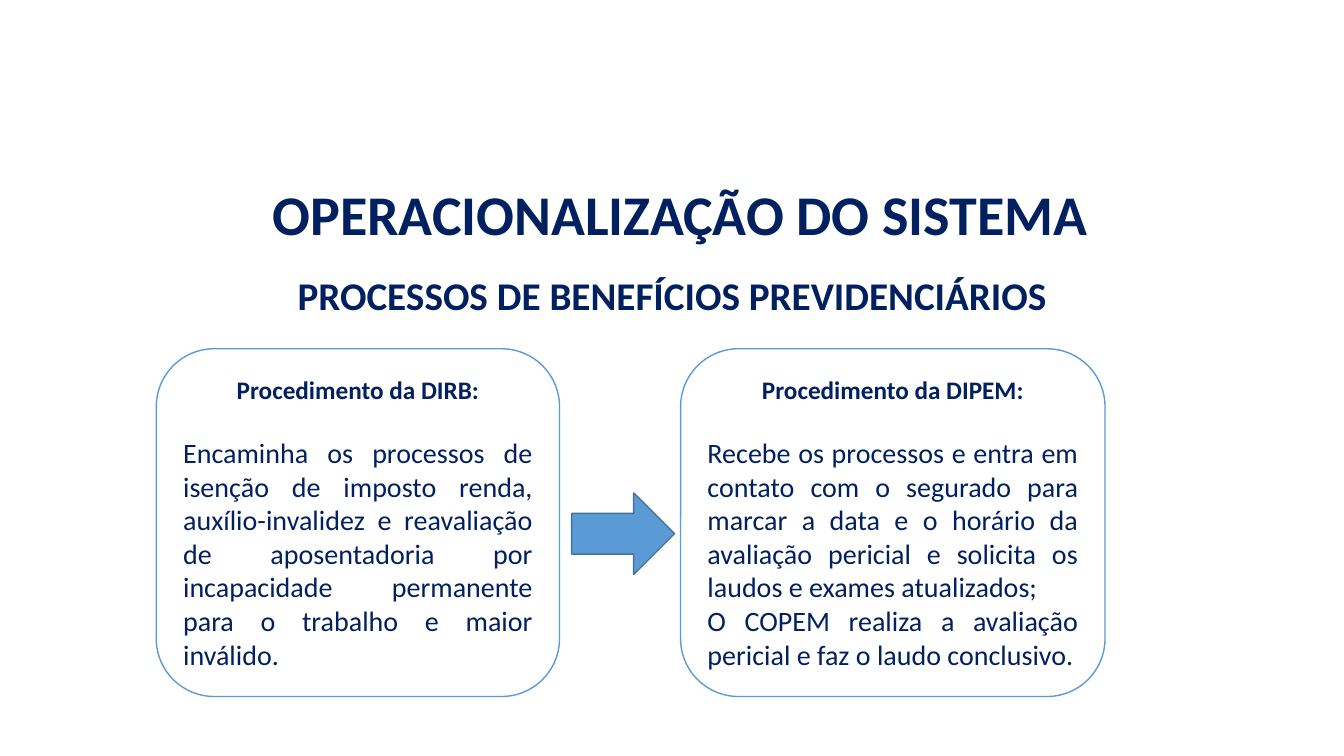
"""Build the slide on how social security benefit cases are processed."""
from dataclasses import dataclass

from pptx import Presentation
from pptx.dml.color import RGBColor
from pptx.enum import shapes, text
from pptx.util import Inches, Pt

NAVY, BLUE, DARK_BLUE, WHITE = "002060", "5B9BD5", "43739E", "FFFFFF"
FONT = "Calibri"
CARD_TOP, CARD_HEIGHT = 3.46, 3.45


@dataclass(frozen=True)
class Heading:
    wording: str
    left: float
    top: float
    width: float
    height: float
    size: int
    anchor: text.MSO_ANCHOR


@dataclass(frozen=True)
class Card:
    title: str
    steps: tuple[str, ...]
    left: float
    width: float


HEADINGS = (
    Heading("OPERACIONALIZAÇÃO DO SISTEMA", 1.08, 1.62, 11.33, 1.08, 40, text.MSO_ANCHOR.MIDDLE),
    Heading("PROCESSOS DE BENEFÍCIOS PREVIDENCIÁRIOS", 1, 2.7, 11.33, 0.6, 28, text.MSO_ANCHOR.TOP),
)
CARDS = (
    Card(
        "Procedimento da DIRB:",
        ("Encaminha os processos de isenção de imposto renda, auxílio-invalidez e "
         "reavaliação de aposentadoria por incapacidade permanente para o trabalho "
         "e maior inválido.",),
        1.55, 4,
    ),
    Card(
        "Procedimento da DIPEM:",
        ("Recebe os processos e entra em contato com o segurado para marcar a data e o "
         "horário da avaliação pericial e solicita os laudos e exames atualizados;",
         "O COPEM realiza a avaliação pericial e faz o laudo conclusivo."),
        6.75, 4.21,
    ),
)


def color(value: str) -> RGBColor:
    return RGBColor.from_string(value)


def write(paragraph, wording: str, size: int, bold: bool, alignment: text.PP_ALIGN) -> None:
    paragraph.text = wording
    paragraph.alignment = alignment
    paragraph.font.name = FONT
    paragraph.font.size = Pt(size)
    paragraph.font.bold = bold
    paragraph.font.color.rgb = color(NAVY)


def add_heading(slide, heading: Heading) -> None:
    box = slide.shapes.add_textbox(
        Inches(heading.left), Inches(heading.top), Inches(heading.width), Inches(heading.height))
    frame = box.text_frame
    frame.word_wrap = True
    frame.vertical_anchor = heading.anchor
    paragraph = frame.paragraphs[0]
    write(paragraph, heading.wording, heading.size, True, text.PP_ALIGN.CENTER)
    paragraph.line_spacing = 0.9


def add_box(slide, kind: shapes.MSO_SHAPE, left: float, top: float, width: float,
            height: float, fill: str, line: str):
    shape = slide.shapes.add_shape(kind, Inches(left), Inches(top), Inches(width), Inches(height))
    shape.shadow.inherit = False
    shape.fill.solid()
    shape.fill.fore_color.rgb = color(fill)
    shape.line.color.rgb = color(line)
    shape.line.width = Pt(1)
    return shape


def add_card(slide, card: Card) -> None:
    shape = add_box(slide, shapes.MSO_SHAPE.ROUNDED_RECTANGLE, card.left, CARD_TOP,
                    card.width, CARD_HEIGHT, WHITE, BLUE)
    frame = shape.text_frame
    frame.word_wrap = True
    frame.vertical_anchor = text.MSO_ANCHOR.MIDDLE
    title = frame.paragraphs[0]
    write(title, card.title, 18, True, text.PP_ALIGN.CENTER)
    title.space_after = Pt(22)
    for step in card.steps:
        write(frame.add_paragraph(), step, 20, False, text.PP_ALIGN.JUSTIFY)


def main() -> None:
    presentation = Presentation()
    presentation.slide_width = Inches(13.33)
    presentation.slide_height = Inches(7.5)
    slide = presentation.slides.add_slide(presentation.slide_layouts[6])
    for heading in HEADINGS:
        add_heading(slide, heading)
    for card in CARDS:
        add_card(slide, card)
    add_box(slide, shapes.MSO_SHAPE.RIGHT_ARROW, 5.67, 4.89, 1.02, 0.81, BLUE, DARK_BLUE)
    presentation.save("out.pptx")


if __name__ == "__main__":
    main()
